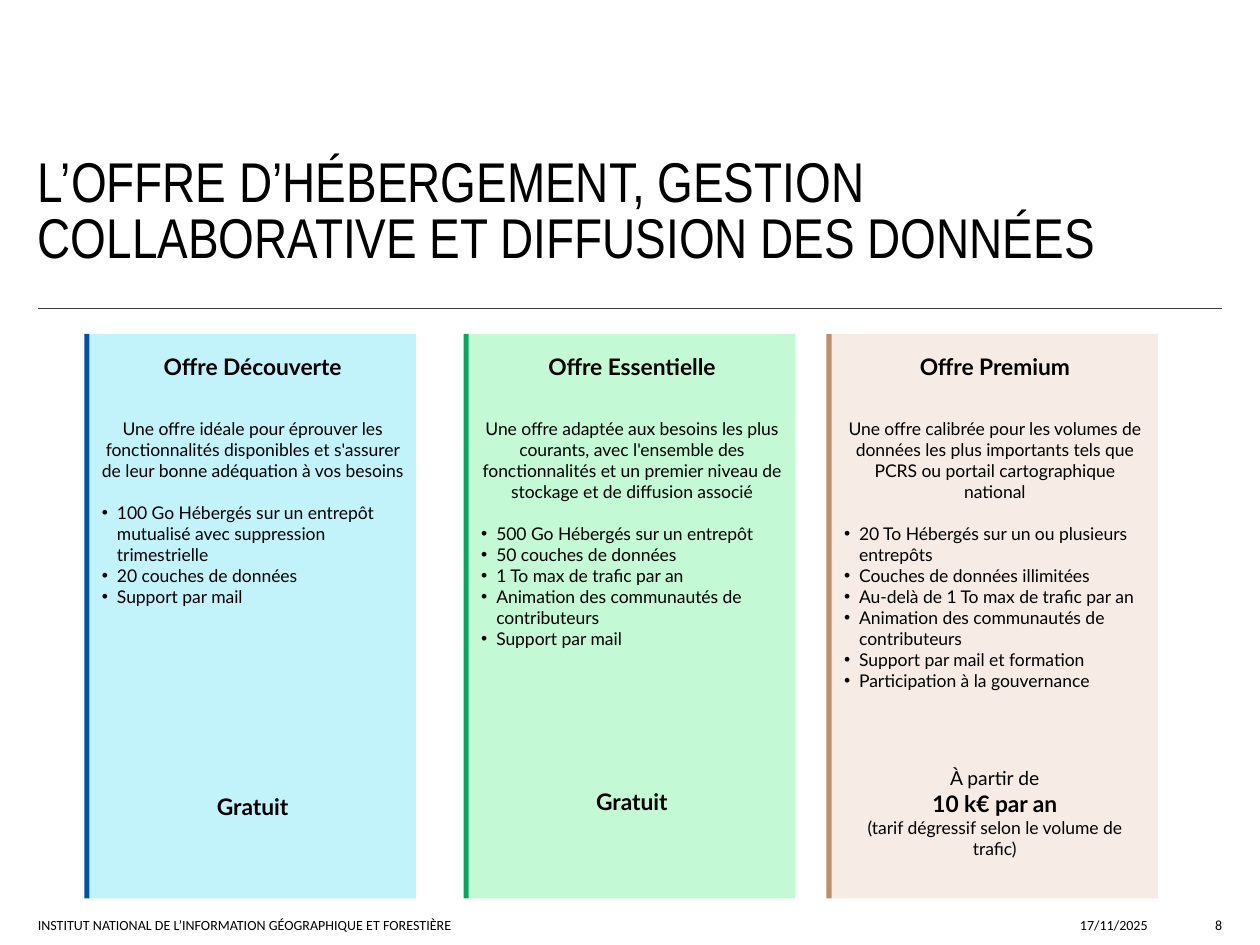
from lxml.etree import SubElement
from pptx import Presentation
from pptx.dml.color import RGBColor
from pptx.enum.shapes import MSO_CONNECTOR, MSO_SHAPE
from pptx.enum.text import MSO_ANCHOR, MSO_AUTO_SIZE, PP_ALIGN
from pptx.oxml.ns import qn
from pptx.util import Inches, Pt

BLACK = RGBColor(0x00, 0x00, 0x00)
RULE_GREY = RGBColor(0x3C, 0x3C, 0x3C)
BLUE, PALE_BLUE = RGBColor(0x03, 0x4F, 0xA6), RGBColor(0xC3, 0xF3, 0xFA)
GREEN, PALE_GREEN = RGBColor(0x04, 0xA6, 0x60), RGBColor(0xC3, 0xF9, 0xD5)
BROWN, PALE_BROWN = RGBColor(0xBD, 0x8E, 0x69), RGBColor(0xF6, 0xEB, 0xE5)

TITLE = "L’OFFRE D’HÉBERGEMENT, GESTION COLLABORATIVE ET DIFFUSION DES DONNÉES"

# Each price line: text, size, bold. price_gap: points between features and price.
OFFERS = [
    {
        "name": "Offre Découverte", "left": 0.67, "accent": BLUE, "fill": PALE_BLUE,
        "pitch": "Une offre idéale pour éprouver les fonctionnalités disponibles "
                 "et s'assurer de leur bonne adéquation à vos besoins",
        "features": [
            "100 Go Hébergés sur un entrepôt mutualisé avec suppression trimestrielle",
            "20 couches de données",
            "Support par mail",
        ],
        "price_gap": 106,
        "price": [("Gratuit", 13, True)],
    },
    {
        "name": "Offre Essentielle", "left": 3.68, "accent": GREEN, "fill": PALE_GREEN,
        "pitch": "Une offre adaptée aux besoins les plus courants, avec l'ensemble des "
                 "fonctionnalités et un premier niveau de stockage et de diffusion associé",
        "features": [
            "500 Go Hébergés sur un entrepôt",
            "50 couches de données",
            "1 To max de trafic par an",
            "Animation des communautés de contributeurs",
            "Support par mail",
        ],
        "price_gap": 79,
        "price": [("Gratuit", 13, True)],
    },
    {
        "name": "Offre Premium", "left": 6.56, "accent": BROWN, "fill": PALE_BROWN,
        "pitch": "Une offre calibrée pour les volumes de données les plus importants "
                 "tels que PCRS ou portail cartographique national",
        "features": [
            "20 To Hébergés sur un ou plusieurs entrepôts",
            "Couches de données illimitées",
            "Au-delà de 1 To max de trafic par an",
            "Animation des communautés de contributeurs",
            "Support par mail et formation",
            "Participation à la gouvernance",
        ],
        "price_gap": 43,
        "price": [
            ("À partir de", 11, False),
            ("10 k€ par an", 13, True),
            ("(tarif dégressif selon le volume de trafic)", 10, False),
        ],
    },
]

# Text, left, width, alignment
FOOTERS = [
    ("INSTITUT NATIONAL DE L’INFORMATION GÉOGRAPHIQUE ET FORESTIÈRE",
     0.3, 4.82, PP_ALIGN.LEFT),
    ("17/11/2025", 7.22, 1.89, PP_ALIGN.RIGHT),
    ("8", 9.38, 0.32, PP_ALIGN.RIGHT),
]

CARD_TOP, CARD_WIDTH, CARD_HEIGHT, BAR_WIDTH = 2.65, 2.59, 4.48, 0.04
FOOTER_TOP, FOOTER_HEIGHT = 7.2, 0.32


def add_run(paragraph, text, size, font, bold=False):
    run = paragraph.add_run()
    run.text = text
    run.font.size = Pt(size)
    run.font.name = font
    run.font.bold = bold
    run.font.color.rgb = BLACK


def set_frame(frame, anchor, left, top, right, bottom):
    frame.word_wrap = True
    frame.auto_size = MSO_AUTO_SIZE.NONE
    frame.vertical_anchor = anchor
    frame.margin_left, frame.margin_top = Inches(left), Inches(top)
    frame.margin_right, frame.margin_bottom = Inches(right), Inches(bottom)


def add_bullet(paragraph):
    properties = paragraph._p.get_or_add_pPr()
    properties.set("marL", str(Inches(0.12)))
    properties.set("indent", str(-Inches(0.12)))
    SubElement(properties, qn("a:buFont")).set("typeface", "Arial")
    SubElement(properties, qn("a:buChar")).set("char", "•")


def add_block(group, left, width, color):
    block = group.shapes.add_shape(
        MSO_SHAPE.RECTANGLE, Inches(left), Inches(CARD_TOP),
        Inches(width), Inches(CARD_HEIGHT))
    block.shadow.inherit = False
    block.fill.solid()
    block.fill.fore_color.rgb = color
    block.line.fill.background()
    return block


def card_lines(offer):
    """Yield text, size, bold, bulleted and space before for each paragraph."""
    yield offer["name"], 13, True, False, 0
    yield offer["pitch"], 10, False, False, 21.6
    for i, feature in enumerate(offer["features"]):
        yield feature, 10, False, True, 0 if i else 12
    for i, (text, size, bold) in enumerate(offer["price"]):
        yield text, size, bold, False, 0 if i else offer["price_gap"]


def add_offer(slide, offer):
    group = slide.shapes.add_group_shape()
    card = add_block(group, offer["left"] + BAR_WIDTH, CARD_WIDTH, offer["fill"])
    add_block(group, offer["left"], BAR_WIDTH, offer["accent"])
    frame = card.text_frame
    set_frame(frame, MSO_ANCHOR.TOP, 0.1, 0.15, 0.1, 0.05)
    for i, (text, size, bold, bulleted, gap) in enumerate(card_lines(offer)):
        paragraph = frame.add_paragraph() if i else frame.paragraphs[0]
        paragraph.alignment = PP_ALIGN.LEFT if bulleted else PP_ALIGN.CENTER
        if gap:
            paragraph.space_before = Pt(gap)
        if bulleted:
            add_bullet(paragraph)
        add_run(paragraph, text, size, "Lato", bold)


def add_title(slide):
    title = slide.shapes.title
    title.left, title.top = Inches(0.3), Inches(1.03)
    title.width, title.height = Inches(9.29), Inches(1.34)
    set_frame(title.text_frame, MSO_ANCHOR.MIDDLE, 0, 0, 0, 0)
    paragraph = title.text_frame.paragraphs[0]
    paragraph.alignment = PP_ALIGN.LEFT
    paragraph.line_spacing = Pt(32)
    paragraph.space_after = Pt(6)
    add_run(paragraph, TITLE, 32, "Arial Narrow")


def add_rule(slide):
    rule = slide.shapes.add_connector(
        MSO_CONNECTOR.STRAIGHT, Inches(0.3), Inches(2.45), Inches(9.7), Inches(2.45))
    rule.line.color.rgb = RULE_GREY
    rule.line.width = Pt(0.5)
    SubElement(rule._element.spPr, qn("a:effectLst"))


def add_footer(slide, text, left, width, alignment):
    footer = slide.shapes.add_textbox(
        Inches(left), Inches(FOOTER_TOP), Inches(width), Inches(FOOTER_HEIGHT))
    set_frame(footer.text_frame, MSO_ANCHOR.MIDDLE, 0, 0, 0, 0.04)
    paragraph = footer.text_frame.paragraphs[0]
    paragraph.alignment = alignment
    add_run(paragraph, text, 8, "Calibri")


def main():
    presentation = Presentation()
    presentation.slide_width, presentation.slide_height = Inches(10), Inches(7.5)
    slide = presentation.slides.add_slide(presentation.slide_layouts[5])
    add_rule(slide)
    add_title(slide)
    for footer in FOOTERS:
        add_footer(slide, *footer)
    for offer in OFFERS:
        add_offer(slide, offer)
    presentation.save("out.pptx")


if __name__ == "__main__":
    main()
